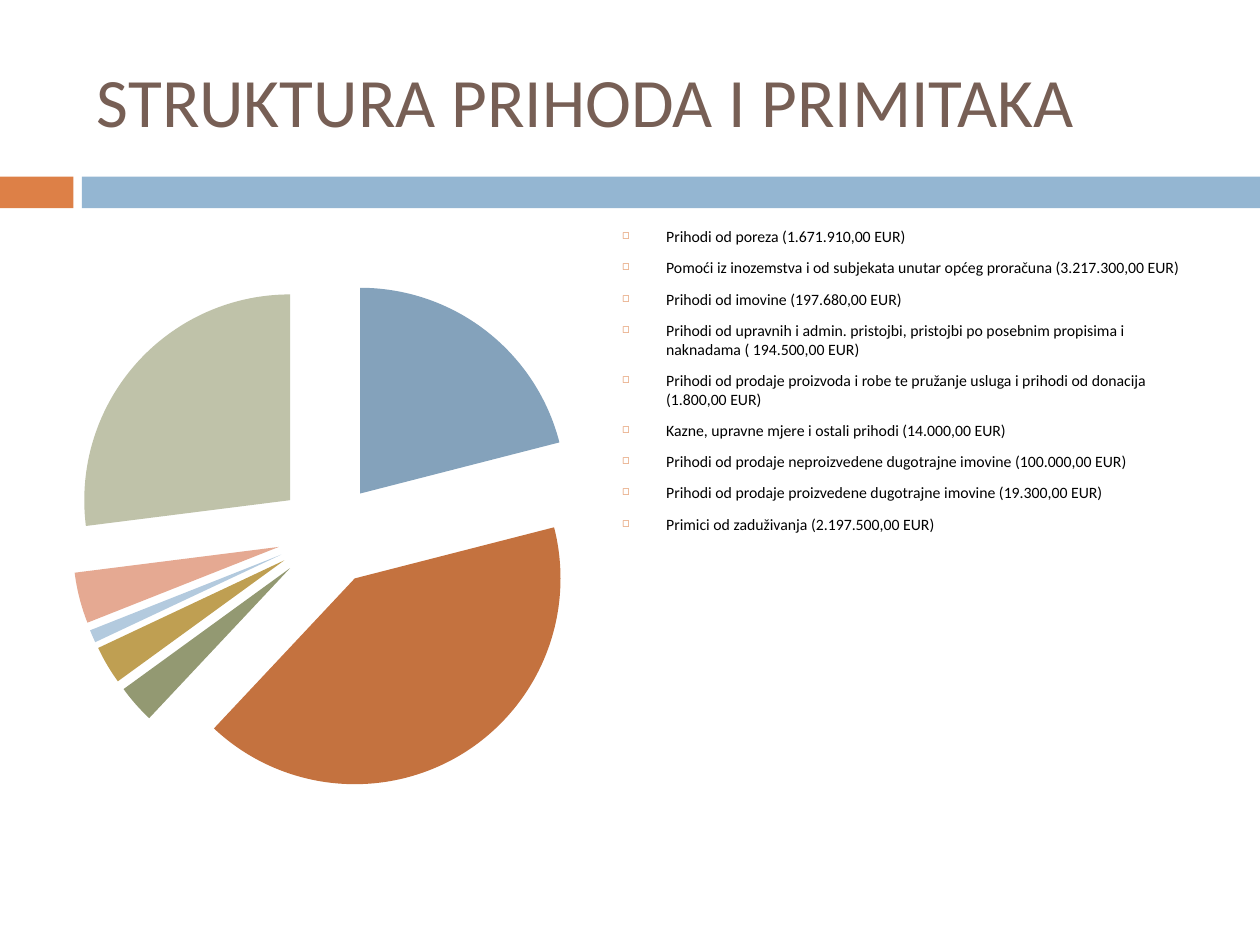
from dataclasses import dataclass

from lxml.etree import SubElement
from pptx import Presentation
from pptx.chart.data import CategoryChartData
from pptx.dml.color import RGBColor
from pptx.enum.chart import XL_CHART_TYPE
from pptx.enum.shapes import MSO_SHAPE
from pptx.enum.text import MSO_ANCHOR, MSO_AUTO_SIZE, PP_ALIGN
from pptx.oxml import parse_xml
from pptx.oxml.ns import nsdecls, qn
from pptx.util import Cm, Pt


@dataclass(frozen=True)
class Theme:
    font: str = "Calibri"
    title_size: float = 39.6
    body_size: float = 9
    chart_size: float = 18
    title: str = "775F55"
    text: str = "000000"
    orange: str = "DD8047"
    blue: str = "94B6D2"
    slices: tuple = ("84A2BB", "C4723F", "939972", "BF9F52", "6E958C",
                     "867D7D", "B3CADE", "E5A992", "BFC2A9")


THEME = Theme()
REVENUES = [
    ("Prihodi od poreza (1.671.910,00 EUR)", 21),
    ("Pomoći iz inozemstva i od subjekata unutar općeg proračuna (3.217.300,00 EUR)", 41),
    ("Prihodi od imovine (197.680,00 EUR)", 3),
    ("Prihodi od upravnih i admin. pristojbi, pristojbi po posebnim propisima i "
     "naknadama ( 194.500,00 EUR)", 3),
    ("Prihodi od prodaje proizvoda i robe te pružanje usluga i prihodi od donacija "
     "(1.800,00 EUR)", 0),
    ("Kazne, upravne mjere i ostali prihodi (14.000,00 EUR)", 0),
    ("Prihodi od prodaje neproizvedene dugotrajne imovine (100.000,00 EUR)", 1),
    ("Prihodi od prodaje proizvedene dugotrajne imovine (19.300,00 EUR)", 4),
    ("Primici od zaduživanja (2.197.500,00 EUR)", 27),
]


def write_text(paragraph, text, size=THEME.body_size, color=THEME.text, space_before=0):
    paragraph.alignment = PP_ALIGN.LEFT
    paragraph.space_before = Pt(space_before)
    run = paragraph.add_run()
    run.text = text
    run.font.name = THEME.font
    run.font.size = Pt(size)
    run.font.color.rgb = RGBColor.from_string(color)


def add_bullet(paragraph):
    properties = paragraph._p.get_or_add_pPr()
    properties.set("marL", str(Cm(0.89)))
    properties.set("indent", str(-Cm(0.89)))
    color = SubElement(properties, qn("a:buClr"))
    SubElement(color, qn("a:srgbClr"), val=THEME.orange)
    SubElement(properties, qn("a:buSzPct"), val="60000")
    SubElement(properties, qn("a:buChar"), char="◻")


def add_bar(slide, left, width, color):
    shape = slide.shapes.add_shape(MSO_SHAPE.RECTANGLE, left, Cm(3.56), width, Cm(0.64))
    shape.shadow.inherit = False
    shape.fill.solid()
    shape.fill.fore_color.rgb = RGBColor.from_string(color)
    shape.line.fill.background()


def set_title(slide, text):
    title = slide.shapes.title
    title.left, title.top, title.width, title.height = Cm(1.7), Cm(0.64), Cm(22.66), Cm(2.74)
    frame = title.text_frame
    frame.auto_size = MSO_AUTO_SIZE.NONE
    frame.vertical_anchor = MSO_ANCHOR.MIDDLE
    write_text(frame.paragraphs[0], text, size=THEME.title_size, color=THEME.title)


def add_bullet_list(slide, items):
    frame = slide.shapes.add_textbox(Cm(12.29), Cm(4.45), Cm(12.04), Cm(12.27)).text_frame
    frame.word_wrap = True
    for index, item in enumerate(items):
        paragraph = frame.add_paragraph() if index else frame.paragraphs[0]
        write_text(paragraph, item, space_before=7)
        add_bullet(paragraph)


def add_pie(slide, values):
    data = CategoryChartData()
    data.categories = [str(number) for number in range(1, len(values) + 1)]
    data.add_series("Series 1", values)
    chart = slide.shapes.add_chart(XL_CHART_TYPE.PIE, Cm(1.09), Cm(5.13),
                                   Cm(11.07), Cm(11.28), data).chart
    chart.has_title = False
    chart.has_legend = False
    chart.font.name = THEME.font
    chart.font.size = Pt(THEME.chart_size)
    chart.font.color.rgb = RGBColor.from_string(THEME.text)
    plot = chart.plots[0]
    plot.vary_by_categories = True
    series = plot.series[0]
    explosion = parse_xml(f'<c:explosion {nsdecls("c")} val="25"/>')
    series._element.find(qn("c:tx")).addnext(explosion)
    for index, color in enumerate(THEME.slices):
        slice_format = series.points[index].format
        slice_format.fill.solid()
        slice_format.fill.fore_color.rgb = RGBColor.from_string(color)
        slice_format.line.fill.background()


def main():
    presentation = Presentation()
    presentation.slide_width, presentation.slide_height = Cm(25.4), Cm(19.05)
    slide = presentation.slides.add_slide(presentation.slide_layouts[5])
    add_bar(slide, Cm(0), Cm(1.48), THEME.orange)
    add_bar(slide, Cm(1.65), Cm(23.75), THEME.blue)
    set_title(slide, "STRUKTURA PRIHODA I PRIMITAKA")
    labels, shares = zip(*REVENUES)
    add_bullet_list(slide, labels)
    add_pie(slide, shares)
    presentation.save("out.pptx")


if __name__ == "__main__":
    main()
